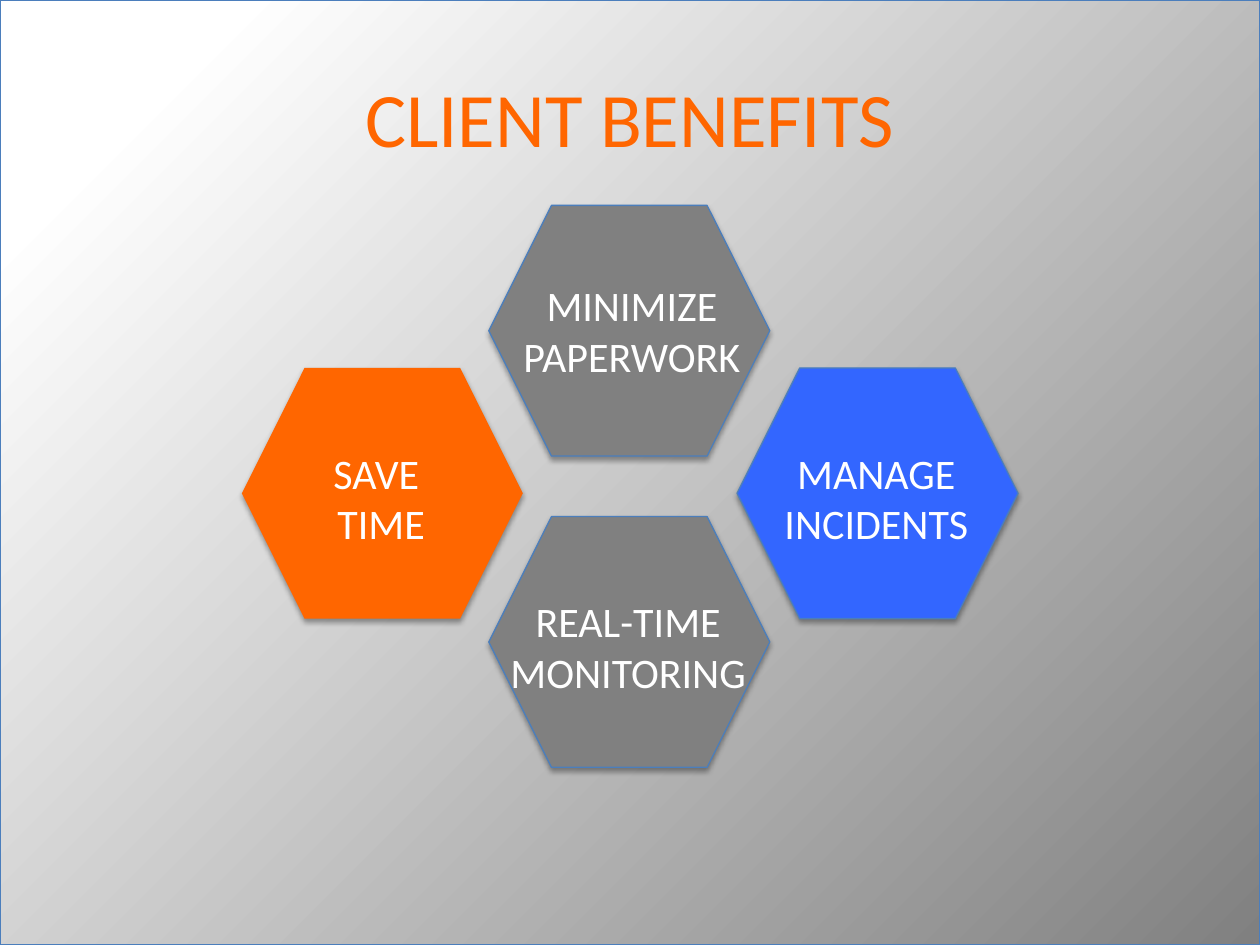
"""Build the client benefits slide: four labelled hexagons on a gradient."""
from lxml import etree
from pptx import Presentation
from pptx.dml.color import RGBColor
from pptx.enum.shapes import MSO_SHAPE
from pptx.enum.text import MSO_ANCHOR, MSO_AUTO_SIZE, PP_ALIGN
from pptx.oxml import parse_xml
from pptx.oxml.ns import nsdecls
from pptx.util import Inches, Pt

RECTANGLE, HEXAGON = MSO_SHAPE.RECTANGLE, MSO_SHAPE.HEXAGON
CENTER, TOP, MIDDLE = PP_ALIGN.CENTER, MSO_ANCHOR.TOP, MSO_ANCHOR.MIDDLE
FIT_SHAPE, FIXED = MSO_AUTO_SIZE.SHAPE_TO_FIT_TEXT, MSO_AUTO_SIZE.NONE

ORANGE = RGBColor(0xFF, 0x66, 0x00)
GRAY = RGBColor(0x80, 0x80, 0x80)
BLUE = RGBColor(0x33, 0x66, 0xFF)
OUTLINE = RGBColor(0x4B, 0x7E, 0xBC)
WHITE = RGBColor(0xFF, 0xFF, 0xFF)

SLIDE_WIDTH, SLIDE_HEIGHT = 10, 7.5
HEXAGON_WIDTH, HEXAGON_HEIGHT = 2.23, 1.99
LABEL_HEIGHT = 0.91
TITLE = "CLIENT BENEFITS"
BENEFITS = [
    {"lines": ["SAVE ", "TIME"], "hexagon": (1.92, 2.92), "fill": ORANGE,
     "outline": None, "label": (2.16, 3.5, 1.73)},
    {"lines": ["MINIMIZE PAPERWORK"], "hexagon": (3.88, 1.63), "fill": GRAY,
     "outline": OUTLINE, "label": (4.02, 2.17, 1.99)},
    {"lines": ["REAL-TIME", "MONITORING"], "hexagon": (3.88, 4.1), "fill": GRAY,
     "outline": OUTLINE, "label": (3.84, 4.68, 2.29)},
    {"lines": ["MANAGE INCIDENTS"], "hexagon": (5.85, 2.92), "fill": BLUE,
     "outline": OUTLINE, "label": (6.09, 3.5, 1.73)},
]
SHADOW = (
    f'<a:outerShdw {nsdecls("a")} blurRad="{Pt(3.1)}" dist="{Pt(1.8)}" '
    'dir="5400000" rotWithShape="0"><a:srgbClr val="000000">'
    '<a:alpha val="35000"/></a:srgbClr></a:outerShdw>'
)


def add_outlined_shape(slide, kind, box, outline):
    shape = slide.shapes.add_shape(kind, *map(Inches, box))
    shape.shadow.inherit = False
    if outline is None:
        shape.line.fill.background()
    else:
        shape.line.color.rgb = outline
        shape.line.width = Pt(0.75)
    return shape


def add_background(slide):
    box = (0, 0, SLIDE_WIDTH, SLIDE_HEIGHT)
    background = add_outlined_shape(slide, RECTANGLE, box, OUTLINE)
    background.fill.gradient()
    background.fill.gradient_angle = 315
    stops = [(0.11, WHITE), (1, GRAY)]
    for stop, (position, color) in zip(background.fill.gradient_stops, stops):
        stop.position = position
        stop.color.rgb = color


def add_hexagon(slide, benefit):
    box = (*benefit["hexagon"], HEXAGON_WIDTH, HEXAGON_HEIGHT)
    hexagon = add_outlined_shape(slide, HEXAGON, box, benefit["outline"])
    hexagon.fill.solid()
    hexagon.fill.fore_color.rgb = benefit["fill"]
    effects = hexagon.element.spPr.find("{*}effectLst")
    effects.append(parse_xml(etree.tostring(etree.fromstring(SHADOW))))


def add_text(slide, lines, box, *, size=24, color=WHITE, anchor=TOP, fit=FIT_SHAPE):
    frame = slide.shapes.add_textbox(*map(Inches, box)).text_frame
    frame.word_wrap = True
    frame.auto_size = fit
    frame.vertical_anchor = anchor
    frame.text = "\n".join(lines)
    for paragraph in frame.paragraphs:
        paragraph.alignment = CENTER
        font = paragraph.runs[0].font
        font.name = "Calibri"
        font.size = Pt(size)
        font.color.rgb = color


def main():
    presentation = Presentation()
    presentation.slide_width = Inches(SLIDE_WIDTH)
    presentation.slide_height = Inches(SLIDE_HEIGHT)
    slide = presentation.slides.add_slide(presentation.slide_layouts[6])
    add_background(slide)
    for benefit in BENEFITS:
        add_hexagon(slide, benefit)
    for benefit in BENEFITS:
        add_text(slide, benefit["lines"], (*benefit["label"], LABEL_HEIGHT))
    add_text(slide, [TITLE], (0.5, 0.3, 9, 1.25), size=44, color=ORANGE,
             anchor=MIDDLE, fit=FIXED)
    presentation.save("out.pptx")


if __name__ == "__main__":
    main()
